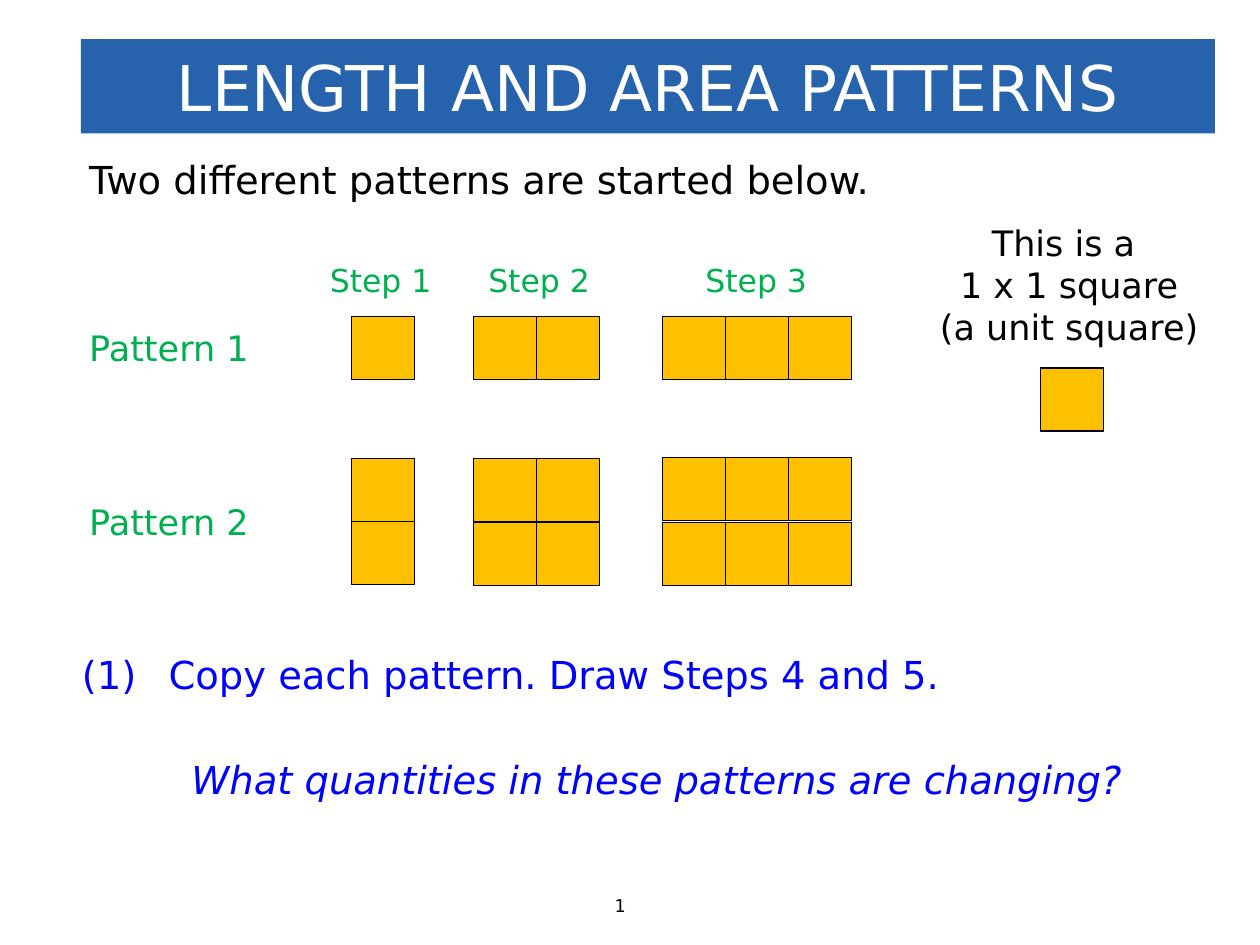
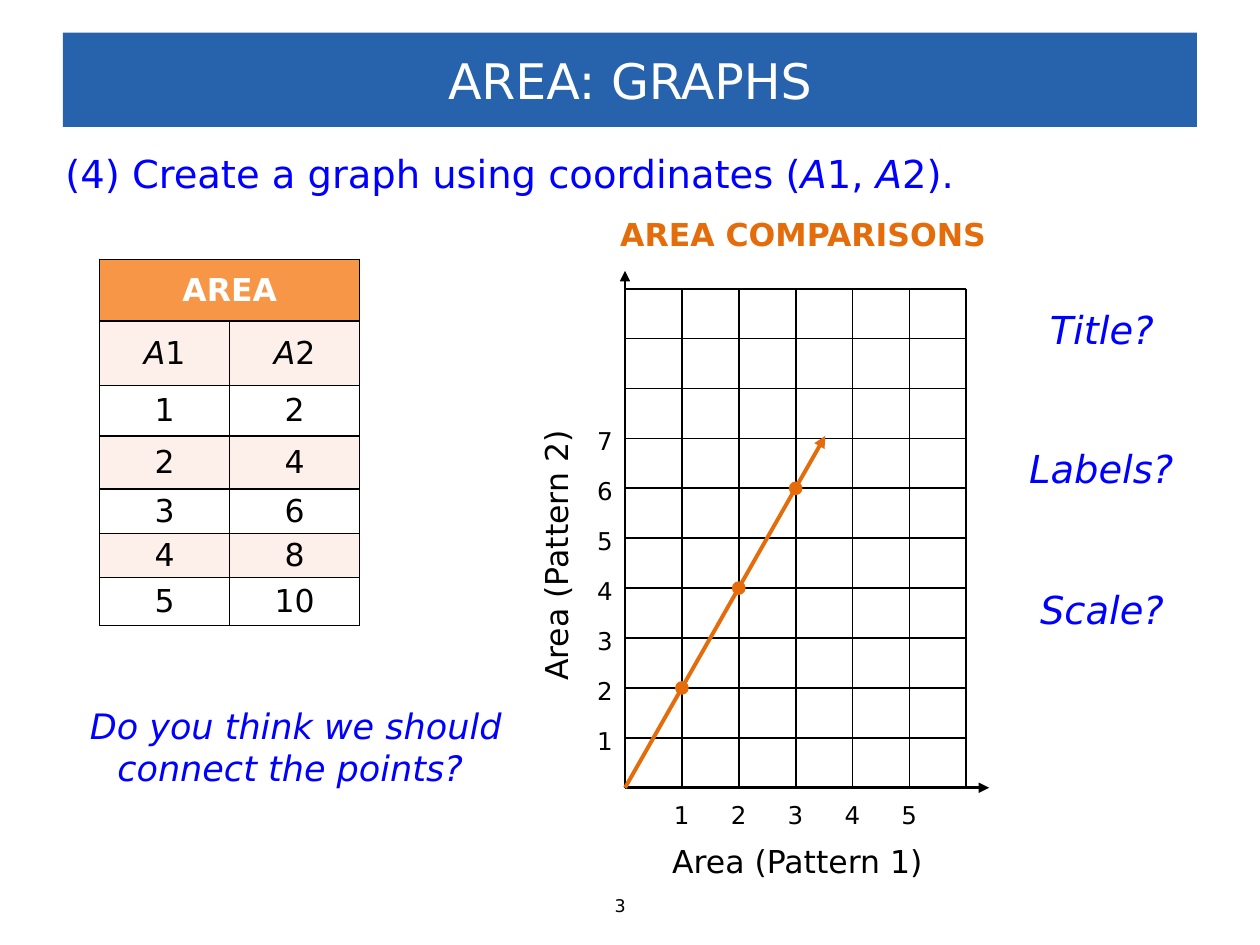
from dataclasses import dataclass

from lxml.etree import SubElement
from pptx import Presentation
from pptx.dml.color import RGBColor as Rgb
from pptx.enum.shapes import MSO_CONNECTOR as Connector, MSO_SHAPE as Preset
from pptx.enum.text import MSO_ANCHOR as Anchor, PP_ALIGN as Align
from pptx.oxml.ns import qn
from pptx.util import Cm, Pt


@dataclass(frozen=True)
class Theme:
    font: str = "DejaVu Sans"
    black: Rgb = Rgb(0, 0, 0)
    white: Rgb = Rgb(255, 255, 255)
    band: Rgb = Rgb.from_string("2762AD")
    task: Rgb = Rgb.from_string("0000FF")
    label: Rgb = Rgb.from_string("00B050")
    tile: Rgb = Rgb.from_string("FFC000")
    graph: Rgb = Rgb.from_string("E46C0A")
    table_head: Rgb = Rgb.from_string("F79646")
    table_band: Rgb = Rgb.from_string("FDEFE9")
    big_title: int = 36
    title: int = 28
    body: int = 22
    note: int = 20
    caption: int = 18
    tick: int = 14
    footer: int = 10


THEME = Theme()

# Content: lengths in centimetres, *asterisks* mark italic words

TILE = 1.27
PATTERN_LABELS = [("Pattern 1", 6.45), ("Pattern 2", 9.96)]
PATTERN_1_TOP = 6.38
# label, label left, label width, label alignment, tiles left, tile row tops of pattern 2
STEPS = [
    ("Step 1", 6.4, 2.64, Align.LEFT, 7.09, (9.25, 10.52)),
    ("Step 2", 9.55, 2.64, Align.CENTER, 9.55, (9.25, 10.54)),
    ("Step 3", 13.97, 2.9, Align.LEFT, 13.36, (9.22, 10.54)),
]
UNIT_SQUARE_NOTE = ["This is a ", "1 x 1 square", "(a unit square)"]

AREA_ROWS = [("AREA", ""), ("*A*1", "*A*2"),
             ("1", "2"), ("2", "4"), ("3", "6"), ("4", "8"), ("5", "10")]
ROW_HEIGHTS = [1.24, 1.3, 1.02, 1.07, 0.89, 0.89, 0.97]
GRAPH_POINTS = [(1, 2), (2, 4), (3, 6)]
LINE_END = (3.52, 7.05)
GRID_COLUMNS, GRID_ROWS = 6, 10
ORIGIN_X, ORIGIN_Y = 12.6, 15.88
GRID_RIGHT, GRID_TOP = 19.48, 5.82
# text, box, line spacing
PROMPTS = [
    ("Title?", (20.57, 6.15, 3.28, 1.09), 0.9),
    ("Labels?", (20.37, 8.84, 3.66, 1.22), 1.0),
    ("Scale?", (20.45, 11.68, 3.53, 1.3), 1.0),
]


def write(frame, lines, size, color, align=Align.LEFT, bold=False, italic=False, spacing=None):
    """Fill a text frame, one paragraph a line; *text* becomes italic."""
    for index, line in enumerate(lines):
        para = frame.add_paragraph() if index else frame.paragraphs[0]
        para.alignment = align
        para.line_spacing = spacing
        font = para.font
        font.name, font.size, font.bold, font.italic = THEME.font, Pt(size), bold, italic
        font.color.rgb = color
        for part, words in enumerate(line.split("*")):
            if words:
                span = para.add_run()
                span.text = words
                if part % 2:
                    span.font.italic = True


def add_text(page, text, area, size, color=THEME.black, wrap=True, **style):
    box = page.shapes.add_textbox(*map(Cm, area))
    box.text_frame.word_wrap = wrap
    write(box.text_frame, [text] if isinstance(text, str) else text, size, color, **style)
    return box


def add_preset(page, preset, area, fill, outline=None):
    shape = page.shapes.add_shape(preset, *map(Cm, area))
    shape.shadow.inherit = False
    shape.fill.solid()
    shape.fill.fore_color.rgb = fill
    if outline is None:
        shape.line.fill.background()
    else:
        shape.line.color.rgb = outline
        shape.line.width = Pt(0.75)
    return shape


def add_tile(page, left, top):
    add_preset(page, Preset.RECTANGLE, (left, top, TILE, TILE), THEME.tile, THEME.black)


def add_line(page, start, end, width=1, color=THEME.black, arrow=False):
    line = page.shapes.add_connector(Connector.STRAIGHT, *map(Cm, (*start, *end)))
    line.line.color.rgb = color
    line.line.width = Pt(width)
    if arrow:
        SubElement(line.line._get_or_add_ln(), qn("a:tailEnd"), type="triangle")
    SubElement(line._element.spPr, qn("a:effectLst"))


def add_page(deck, title, title_size, left, top, number):
    """Add a blank slide with its title band and page number."""
    page = deck.slides.add_slide(deck.slide_layouts[6])
    add_text(page, number, (12.14, 17.91, 1.12, 0.69), THEME.footer, wrap=False)
    band = add_preset(page, Preset.RECTANGLE, (left, top, 22.86, 1.9), THEME.band)
    band.text_frame.word_wrap = True
    band.text_frame.vertical_anchor = Anchor.MIDDLE
    write(band.text_frame, [title], title_size, THEME.white, Align.CENTER)
    return page


def number_paragraph(para, indent):
    """Turn a paragraph into a hanging (1) item."""
    props = para._p.get_or_add_pPr()
    props.set("marL", str(Cm(indent)))
    props.set("indent", str(-Cm(indent)))
    numbering = props.makeelement(qn("a:buAutoNum"), type="arabicParenBoth")
    props.insert_element_before(numbering, "a:tabLst", "a:defRPr", "a:extLst")


def border_cell(cell):
    props = cell._tc.get_or_add_tcPr()
    for side in ("lnL", "lnR", "lnT", "lnB"):
        edge = SubElement(props, qn(f"a:{side}"), w=str(Pt(1)))
        fill = SubElement(edge, qn("a:solidFill"))
        SubElement(fill, qn("a:srgbClr"), val=str(THEME.black))


def add_area_table(page):
    table = page.shapes.add_table(len(AREA_ROWS), 2, Cm(2.01), Cm(5.23),
                                  Cm(5.24), Cm(sum(ROW_HEIGHTS))).table
    table.first_row = table.horz_banding = False
    for row, (values, height) in enumerate(zip(AREA_ROWS, ROW_HEIGHTS)):
        table.rows[row].height = Cm(height)
        head = row == 0
        fill = THEME.table_head if head else THEME.table_band if row % 2 else THEME.white
        for column, value in enumerate(values):
            cell = table.cell(row, column)
            border_cell(cell)
            cell.fill.solid()
            cell.fill.fore_color.rgb = fill
            cell.vertical_anchor = Anchor.MIDDLE
            cell.margin_left = cell.margin_right = Cm(0.18)
            cell.margin_top = cell.margin_bottom = 0
            write(cell.text_frame, [value], THEME.caption,
                  THEME.white if head else THEME.black, Align.CENTER, bold=head)
    table.cell(0, 0).merge(table.cell(0, 1))


def grid_point(x, y):
    """Place graph coordinates on the slide."""
    return (ORIGIN_X + x * (GRID_RIGHT - ORIGIN_X) / GRID_COLUMNS,
            ORIGIN_Y - y * (ORIGIN_Y - GRID_TOP) / GRID_ROWS)


def add_graph(page):
    for x in range(GRID_COLUMNS + 1):
        add_line(page, grid_point(x, GRID_ROWS), grid_point(x, 0))
    for y in range(GRID_ROWS + 1):
        add_line(page, grid_point(0, y), grid_point(GRID_COLUMNS, y))
    origin = grid_point(0, 0)
    for axis_end in ((ORIGIN_X, 5.46), (19.94, ORIGIN_Y)):
        add_line(page, origin, axis_end, 1.5, arrow=True)

    for x in range(1, 6):
        add_text(page, str(x), (grid_point(x, 0)[0] - 0.41, 16, 0.92, 0.86), THEME.tick)
    for y in range(1, 8):
        add_text(page, str(y), (11.79, grid_point(0, y)[1] - 0.37, 0.92, 0.86), THEME.tick)
    add_text(page, "Area (Pattern 1)", (13.13, 16.84, 5.89, 1.02), THEME.caption,
             align=Align.CENTER)
    side_label = add_text(page, "Area (Pattern 2)", (8.18, 10.69, 6.05, 1.02), THEME.caption,
                          align=Align.CENTER)
    side_label.rotation = 270
    add_text(page, "AREA COMPARISONS", (11.81, 4.22, 8.76, 1.02), THEME.caption, THEME.graph,
             align=Align.CENTER, bold=True)

    add_line(page, origin, grid_point(*LINE_END), 2.25, THEME.graph, arrow=True)
    dot = 0.25
    for point in GRAPH_POINTS:
        x, y = grid_point(*point)
        add_preset(page, Preset.OVAL, (x - dot / 2, y - dot / 2, dot, dot),
                   THEME.graph, THEME.graph)


def build_patterns_page(deck):
    page = add_page(deck, "LENGTH AND AREA PATTERNS", THEME.big_title, 1.63, 0.79, "1")
    add_text(page, "Two different patterns are started below.", (1.55, 3.02, 16.64, 1.19),
             THEME.body)
    for label, top in PATTERN_LABELS:
        add_text(page, label, (1.55, top, 3.91, 1.12), THEME.note, THEME.label)
    for count, (label, left, width, align, tiles_left, tops) in enumerate(STEPS, 1):
        add_text(page, label, (left, 5.13, width, 1.02), THEME.caption, THEME.label, align=align)
        for top in (PATTERN_1_TOP, *tops):
            for column in range(count):
                add_tile(page, tiles_left + column * TILE, top)
    add_tile(page, 20.98, 7.42)
    add_text(page, UNIT_SQUARE_NOTE, (18.62, 4.34, 5.87, 2.82), THEME.note, align=Align.CENTER)

    task = add_text(page, "Copy each pattern. Draw Steps 4 and 5.", (1.4, 13, 18.59, 1.19),
                    THEME.body, THEME.task)
    number_paragraph(task.text_frame.paragraphs[0], 1.75)
    add_text(page, "What quantities in these patterns are changing?",
             (3.61, 15.11, 19.58, 1.19), THEME.body, THEME.task, italic=True)


def build_graphs_page(deck):
    page = add_page(deck, "AREA: GRAPHS", THEME.title, 1.27, 0.66, "3")
    add_text(page, "(4) Create a graph using coordinates (*A*1, *A*2).",
             (1.07, 2.9, 19.1, 1.35), THEME.body, THEME.task)
    add_graph(page)
    add_area_table(page)
    for prompt, area, spacing in PROMPTS:
        add_text(page, prompt, area, THEME.body, THEME.task, align=Align.CENTER, italic=True,
                 spacing=spacing)
    add_text(page, "Do you think we should connect the points? ", (0.86, 14.07, 10.21, 2.24),
             THEME.note, THEME.task, align=Align.CENTER, italic=True)


def main():
    deck = Presentation()
    deck.slide_width, deck.slide_height = Cm(25.4), Cm(19.05)
    build_patterns_page(deck)
    build_graphs_page(deck)
    deck.save("out.pptx")


if __name__ == "__main__":
    main()
